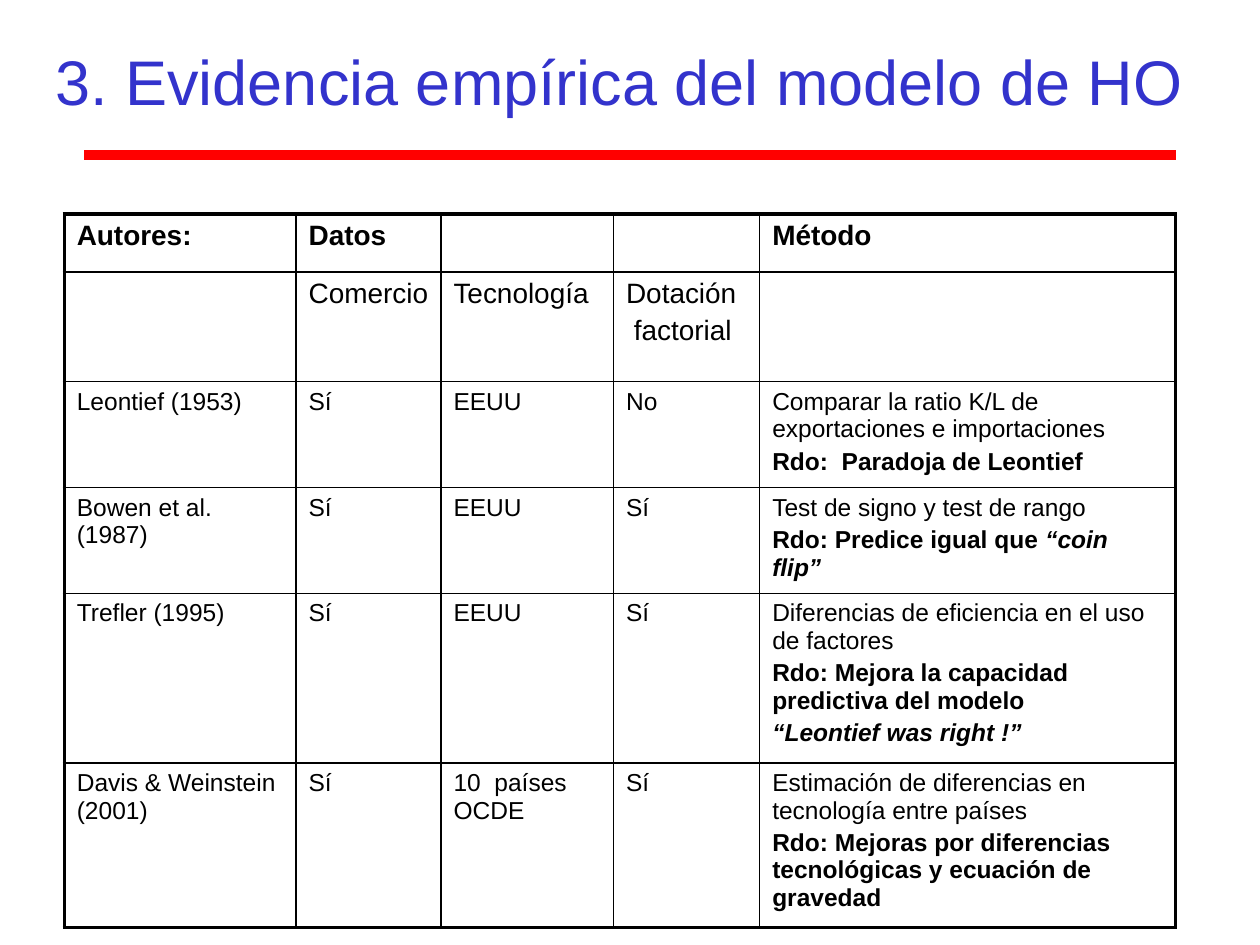
from dataclasses import dataclass

from lxml import etree
from pptx import Presentation
from pptx import util as u
from pptx.dml.color import RGBColor
from pptx.enum import shapes, text
from pptx.oxml import ns

FONT = "Arial"
BLACK, BLUE, RED = "000000", "3333CC", "FF0000"
THIN, THICK = 1, 2.25


@dataclass(frozen=True)
class Run:
    text: str
    bold: bool = False
    italic: bool = False


@dataclass(frozen=True)
class Study:
    author: str
    trade: str
    tech: str
    factors: str
    method: str
    result: tuple[tuple[Run, ...], ...]

    def cells(self) -> list:
        plain = [self.author, self.trade, self.tech, self.factors]
        return [[[Run(word)]] for word in plain] + [[[Run(self.method)], *self.result]]


STUDIES = [
    Study("Leontief (1953)", "Sí", "EEUU", "No",
          "Comparar la ratio K/L de exportaciones e importaciones",
          ((Run("Rdo:  Paradoja de Leontief", True),),)),
    Study("Bowen et al. (1987)", "Sí", "EEUU", "Sí",
          "Test de signo y test de rango",
          ((Run("Rdo: Predice igual que ", True), Run("“coin flip”", True, True)),)),
    Study("Trefler (1995)", "Sí", "EEUU", "Sí",
          "Diferencias de eficiencia en el uso de factores",
          ((Run("Rdo: Mejora la capacidad predictiva del modelo", True),),
           (Run("“Leontief was right !”", True, True),))),
    Study("Davis & Weinstein (2001)", "Sí", "10  países OCDE", "Sí",
          "Estimación de diferencias en tecnología entre países",
          ((Run("Rdo: Mejoras por diferencias tecnológicas y ecuación de gravedad", True),),)),
]
HEADS = [
    [[[Run("Autores:", True)]], [[Run("Datos", True)]], [], [], [[Run("Método", True)]]],
    [[], [[Run("Comercio")]], [[Run("Tecnología")]],
     [[Run("Dotación")], [Run(" factorial")]], []],
]
WIDTHS = [1.84, 1.15, 1.37, 1.16, 3.3]
HEIGHTS = [0.46, 0.87, 0.8, 0.8, 1.27, 1.23]


def color(code: str) -> RGBColor:
    return RGBColor.from_string(code)


def style(font, size: float, code: str, bold: bool = False, italic: bool = False) -> None:
    font.name, font.size = FONT, u.Pt(size)
    font.bold, font.italic = bold, italic
    font.color.rgb = color(code)


def border(cell, sides: dict[str, float]) -> None:
    """Draw black edges; sides maps L, R, T, B, in that order, to points."""
    props = cell._tc.get_or_add_tcPr()
    for spot, (side, width) in enumerate(sides.items()):
        line = etree.Element(ns.qn(f"a:ln{side}"), w=str(u.Pt(width)))
        fill = etree.SubElement(line, ns.qn("a:solidFill"))
        etree.SubElement(fill, ns.qn("a:srgbClr"), val=BLACK)
        props.insert(spot, line)


def write(cell, paras: list, size: int) -> None:
    frame = cell.text_frame
    for n, runs in enumerate(paras):
        para = frame.add_paragraph() if n else frame.paragraphs[0]
        if n:
            para.space_before = u.Pt(0.2 * size)
        for item in runs:
            run = para.add_run()
            run.text = item.text
            style(run.font, size, BLACK, item.bold, item.italic)


def add_title(slide) -> None:
    box = slide.shapes.add_textbox(u.Inches(0.27), u.Inches(0.05),
                                   u.Inches(9.29), u.Inches(1.18))
    frame = box.text_frame
    frame.word_wrap = True
    frame.vertical_anchor = text.MSO_ANCHOR.MIDDLE
    frame.text = "3. Evidencia empírica del modelo de HO"
    para = frame.paragraphs[0]
    para.alignment = text.PP_ALIGN.CENTER
    style(para.runs[0].font, 36, BLUE)


def add_rule(slide) -> None:
    y = u.Inches(1.23)
    rule = slide.shapes.add_connector(shapes.MSO_CONNECTOR.STRAIGHT,
                                      u.Inches(0.67), y, u.Inches(9.33), y)
    rule.line.color.rgb = color(RED)
    rule.line.width = u.Pt(6)
    etree.SubElement(rule._element.spPr, ns.qn("a:effectLst"))


def add_grid(slide) -> None:
    rows = HEADS + [study.cells() for study in STUDIES]
    table = slide.shapes.add_table(len(rows), len(WIDTHS), u.Inches(0.51), u.Inches(1.7),
                                   u.Inches(sum(WIDTHS)), u.Inches(sum(HEIGHTS))).table
    table.first_row = table.horz_banding = False
    for col, width in zip(table.columns, WIDTHS):
        col.width = u.Inches(width)
    for row, height in zip(table.rows, HEIGHTS):
        row.height = u.Inches(height)
    for r, row in enumerate(rows):
        for c, paras in enumerate(row):
            cell = table.cell(r, c)
            cell.fill.background()
            outer = {"L": c == 0, "R": c == len(WIDTHS) - 1,
                     "T": r == 0, "B": r == len(rows) - 1}
            border(cell, {side: THICK if edge else THIN for side, edge in outer.items()})
            write(cell, paras, 16 if r < len(HEADS) else 14)


def main() -> None:
    deck = Presentation()
    deck.slide_width, deck.slide_height = u.Inches(10), u.Inches(7.5)
    slide = deck.slides.add_slide(deck.slide_layouts[6])
    add_rule(slide)
    add_title(slide)
    add_grid(slide)
    deck.save("out.pptx")


if __name__ == "__main__":
    main()
